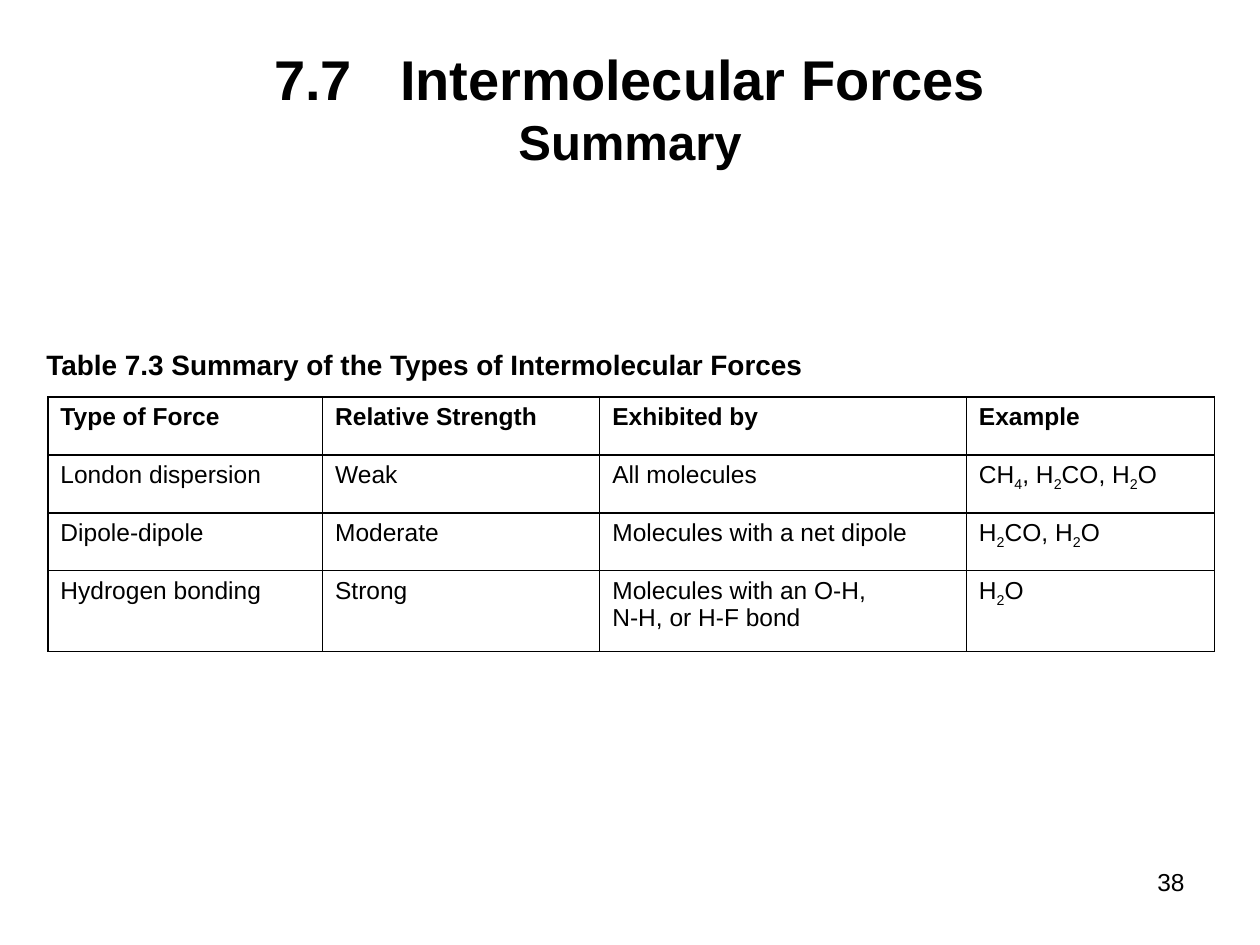
from itertools import groupby
from lxml.etree import SubElement
from pptx import Presentation
from pptx.dml.color import RGBColor
from pptx.enum.text import MSO_ANCHOR as Anchor, PP_ALIGN as Align
from pptx.oxml.ns import qn
from pptx.util import Inches, Pt

COLORS = {"ink": "000000", "paper": "FFFFFF"}

deck = Presentation()
deck.slide_width, deck.slide_height = Inches(10), Inches(7.5)
slide = deck.slides.add_slide(deck.slide_layouts[6])


def add_run(para, text, size, bold=False):
    run = para.add_run()
    run.text = text
    style = {"name": "Arial", "size": Pt(size), "bold": bold}
    for key, value in style.items():
        setattr(run.font, key, value)
    run.font.color.rgb = RGBColor.from_string(COLORS["ink"])
    return run


def add_text(box, align, anchor=Anchor.TOP):
    frame = slide.shapes.add_textbox(*map(Inches, box)).text_frame
    frame.word_wrap = True
    frame.vertical_anchor = anchor
    para = frame.paragraphs[0]
    para.alignment = align
    return para


# Page number
add_run(add_text((8.35, 6.83, 1.15, 0.34), Align.RIGHT), "38", 14)

# Title
title = add_text((0.35, 0.24, 9.3, 1.23), Align.CENTER, Anchor.MIDDLE)
add_run(title, "7.7\tIntermolecular Forces", 32, True)
title.add_line_break()
add_run(title, "Summary", 28, True)

# Table caption
caption = add_text((0.27, 2.71, 6.46, 0.44), Align.LEFT)
caption.space_before = Pt(3)
add_run(caption, "Table 7.3 Summary of the Types of Intermolecular Forces", 16, True)

# Table of forces
rows = [
    ["Type of Force", "Relative Strength", "Exhibited by", "Example"],
    ["London dispersion", "Weak", "All molecules", "CH4, H2CO, H2O"],
    ["Dipole-dipole", "Moderate", "Molecules with a net dipole", "H2CO, H2O"],
    ["Hydrogen bonding", "Strong", "Molecules with an O-H,\nN-H, or H-F bond", "H2O"],
]
widths = [2.18, 2.2, 2.91, 1.97]
heights = [0.46, 0.46, 0.46, 0.64]
frame = slide.shapes.add_table(
    len(rows), len(widths), Inches(0.38), Inches(3.15),
    Inches(sum(widths)), Inches(sum(heights)))
table = frame.table
for col, width in zip(table.columns, widths):
    col.width = Inches(width)
for row, height in zip(table.rows, heights):
    row.height = Inches(height)

for r, row in enumerate(rows):
    for c, text in enumerate(row):
        cell = table.cell(r, c)
        # Cell borders come before the fill
        props = cell._tc.get_or_add_tcPr()
        for side in ("lnL", "lnR", "lnT", "lnB"):
            line = SubElement(props, qn(f"a:{side}"), w=str(Pt(1)))
            fill = SubElement(line, qn("a:solidFill"))
            SubElement(fill, qn("a:srgbClr"), val=COLORS["ink"])
        cell.fill.solid()
        cell.fill.fore_color.rgb = RGBColor.from_string(COLORS["paper"])

        # Digits in formulas are subscripts
        for i, words in enumerate(text.split("\n")):
            body = cell.text_frame
            para = body.add_paragraph() if i else body.paragraphs[0]
            for digit, chars in groupby(words, str.isdigit):
                run = add_run(para, "".join(chars), 14, r == 0)
                if digit:
                    run.font._element.set("baseline", "-25000")

deck.save("out.pptx")
